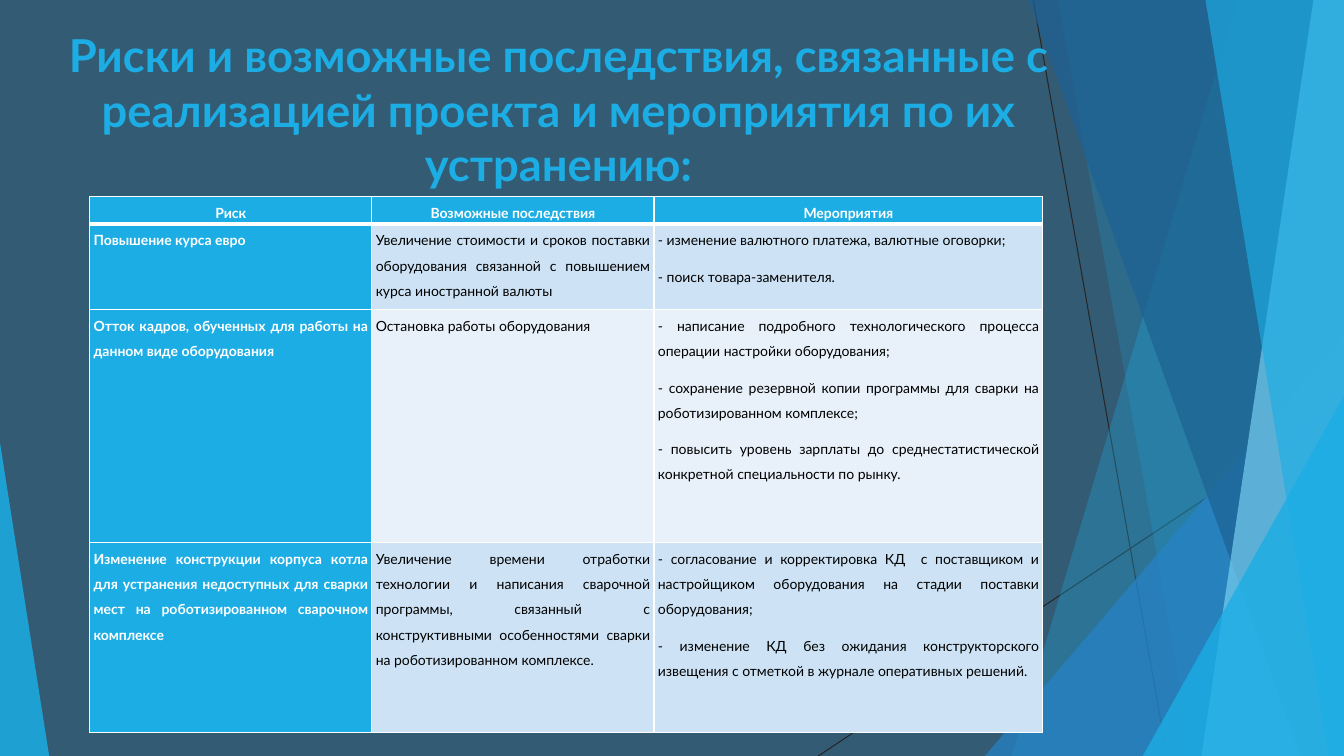
from lxml import etree
from pptx import Presentation
from pptx import util as u
from pptx.dml.color import RGBColor
from pptx.enum import shapes, text
from pptx.oxml.ns import qn

FONT = "Lato"
BLUE, WHITE, BLACK = "1CADE4", "FFFFFF", "000000"
WIDTH, HEIGHT = 33.87, 19.05  # all lengths in cm

TITLE = ("Риски и возможные последствия, связанные с реализацией проекта "
         "и мероприятия по их устранению:")
HEADER = ["Риск", "Возможные последствия", "Мероприятия"]
RISKS = [
    ("Повышение курса евро",
     "Увеличение стоимости и сроков поставки оборудования связанной с повышением курса "
     "иностранной валюты",
     ["- изменение валютного платежа, валютные оговорки;",
      "- поиск товара-заменителя."]),
    ("Отток кадров, обученных для работы на данном виде оборудования",
     "Остановка работы оборудования",
     ["- написание подробного технологического процесса операции настройки оборудования;",
      "- сохранение резервной копии программы для сварки на роботизированном комплексе;",
      "- повысить уровень зарплаты до среднестатистической конкретной специальности по рынку."]),
    ("Изменение конструкции корпуса котла для устранения недоступных для сварки мест "
     "на роботизированном сварочном комплексе",
     "Увеличение времени отработки технологии и написания сварочной программы, связанный "
     "с конструктивными особенностями сварки на роботизированном комплексе.",
     ["- согласование и корректировка КД  с поставщиком и настройщиком оборудования "
      "на стадии поставки оборудования;",
      "- изменение КД без ожидания конструкторского извещения с отметкой в журнале "
      "оперативных решений."]),
]
COLUMNS = [7.11, 7.11, 9.8]
ROWS = [0.69, 2.16, 5.87, 4.78]
ROW_FILLS = ["CDE3F5", "E8F1FA"]

LINES = [(26.04, 0, 29.41, HEIGHT), (WIDTH, 10.24, 20.62, HEIGHT)]
# Bands reach the right edge: left end at the top, left end at the bottom, colour, opacity
BACK_BANDS = [(31.19, 25.5, BLUE, 30), (26.67, 30.05, BLUE, 20)]
FRONT_BANDS = [(25.93, 32.79, "1D6294", 70), (33.1, 30.28, "77CEEF", 70),
               (30.38, 33.48, BLUE, 65)]
# Triangles stand on the bottom edge: left, top, width, apex, colour, opacity
BACK_TRIANGLE = (24.82, 8.46, 9.05, 1, "2683C6", 72)
FRONT_TRIANGLES = [(28.8, 9.98, 5.07, 1, BLUE, 80), (0, 11.15, 1.24, 0, BLUE, 85)]


def rgb(value):
    return RGBColor.from_string(value)


def fill_clear(shape, color, opacity):
    """Solid fill with the given opacity in percent, no outline, no shadow."""
    shape.shadow.inherit = False
    shape.line.fill.background()
    shape.fill.solid()
    shape.fill.fore_color.rgb = rgb(color)
    color_node = shape._element.spPr.find(qn("a:solidFill"))[0]
    etree.SubElement(color_node, qn("a:alpha"), val=str(opacity * 1000))


def add_line(slide, x1, y1, x2, y2):
    line = slide.shapes.add_connector(
        shapes.MSO_CONNECTOR.STRAIGHT, u.Cm(x1), u.Cm(y1), u.Cm(x2), u.Cm(y2))
    line.line.color.rgb = rgb("262626")
    line.line.width = u.Pt(0.75)
    etree.SubElement(line._element.spPr, qn("a:effectLst"))


def add_band(slide, top_x, bottom_x, color, opacity):
    builder = slide.shapes.build_freeform(u.Cm(top_x), 0)
    corners = [(WIDTH, 0), (WIDTH, HEIGHT), (bottom_x, HEIGHT)]
    builder.add_line_segments([(u.Cm(x), u.Cm(y)) for x, y in corners], close=True)
    fill_clear(builder.convert_to_shape(), color, opacity)


def add_triangle(slide, left, top, width, apex, color, opacity):
    triangle = slide.shapes.add_shape(
        shapes.MSO_SHAPE.ISOSCELES_TRIANGLE,
        u.Cm(left), u.Cm(top), u.Cm(width), u.Cm(HEIGHT - top))
    triangle.adjustments[0] = apex
    fill_clear(triangle, color, opacity)


def add_run(paragraph, words, size, color, bold):
    run = paragraph.add_run()
    run.text = words
    run.font.name = FONT
    run.font.size = u.Pt(size)
    run.font.bold = bold
    run.font.color.rgb = rgb(color)


def add_borders(cell, top, bottom):
    properties = cell._tc.get_or_add_tcPr()
    for side, points in (("L", 1), ("R", 1), ("T", top), ("B", bottom)):
        border = etree.SubElement(properties, qn("a:ln" + side), w=str(u.Pt(points)))
        fill = etree.SubElement(border, qn("a:solidFill"))
        etree.SubElement(fill, qn("a:srgbClr"), val=WHITE)


def fill_cell(cell, paragraphs, align, fill, color, bold):
    cell.margin_left = cell.margin_right = u.Cm(0.1)
    cell.margin_top = cell.margin_bottom = 0
    cell.fill.solid()
    cell.fill.fore_color.rgb = rgb(fill)
    frame = cell.text_frame
    for index, words in enumerate(paragraphs):
        paragraph = frame.add_paragraph() if index else frame.paragraphs[0]
        paragraph.alignment = align
        paragraph.line_spacing = 1.5
        paragraph.space_after = u.Pt(8)
        add_run(paragraph, words, 10, color, bold)


def add_background(slide):
    slide.background.fill.solid()
    slide.background.fill.fore_color.rgb = rgb("335B74")
    for line in LINES:
        add_line(slide, *line)
    for band in BACK_BANDS:
        add_band(slide, *band)
    add_triangle(slide, *BACK_TRIANGLE)
    for band in FRONT_BANDS:
        add_band(slide, *band)
    for triangle in FRONT_TRIANGLES:
        add_triangle(slide, *triangle)


def add_title(slide):
    title = slide.shapes.title
    slide.shapes._spTree.append(title._element)  # in front of the background
    title.left, title.top = u.Cm(-0.38), u.Cm(0.56)
    title.width, title.height = u.Cm(28.91), u.Cm(3.66)
    frame = title.text_frame
    frame.word_wrap = True
    frame.auto_size = text.MSO_AUTO_SIZE.NONE
    frame.vertical_anchor = text.MSO_ANCHOR.TOP
    frame.paragraphs[0].alignment = text.PP_ALIGN.CENTER
    add_run(frame.paragraphs[0], TITLE, 32.4, BLUE, True)


def add_risk_table(slide):
    table = slide.shapes.add_table(
        len(ROWS), len(COLUMNS), u.Cm(2.26), u.Cm(4.95),
        u.Cm(sum(COLUMNS)), u.Cm(sum(ROWS))).table
    table.first_row = table.horz_banding = False
    for column, width in zip(table.columns, COLUMNS):
        column.width = u.Cm(width)
    for row, height in zip(table.rows, ROWS):
        row.height = u.Cm(height)

    content = [[[words] for words in HEADER]]
    content += [[[risk], [effect], measures] for risk, effect, measures in RISKS]
    for r, row in enumerate(content):
        align = text.PP_ALIGN.JUSTIFY if r else text.PP_ALIGN.CENTER
        for c, paragraphs in enumerate(row):
            cell = table.cell(r, c)
            strong = r == 0 or c == 0
            add_borders(cell, top=3 if r == 1 else 1, bottom=3 if r == 0 else 1)
            fill_cell(cell, paragraphs, align,
                      fill=BLUE if strong else ROW_FILLS[(r - 1) % 2],
                      color=WHITE if strong else BLACK, bold=strong)


def main():
    presentation = Presentation()
    presentation.slide_width, presentation.slide_height = u.Cm(WIDTH), u.Cm(HEIGHT)
    slide = presentation.slides.add_slide(presentation.slide_layouts[5])
    add_background(slide)
    add_title(slide)
    add_risk_table(slide)
    presentation.save("out.pptx")


if __name__ == "__main__":
    main()
